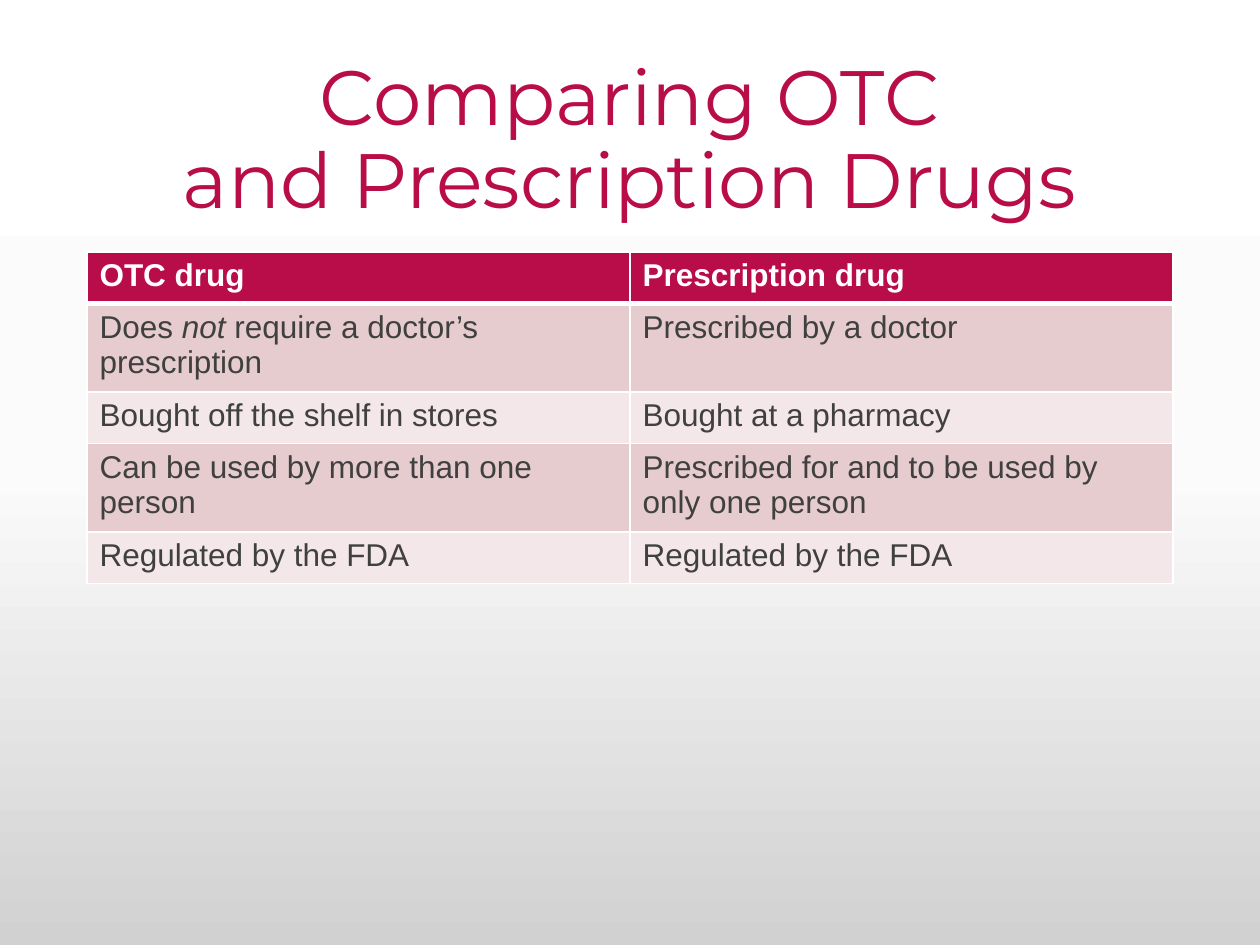
from lxml import etree
from pptx import Presentation
from pptx.dml.color import RGBColor
from pptx.enum import text
from pptx.oxml import ns
from pptx.util import Inches, Pt

CRIMSON = RGBColor(0xB8, 0x0D, 0x48)
ROSE = RGBColor(0xE6, 0xCC, 0xCF)
PALE_ROSE = RGBColor(0xF3, 0xE7, 0xE9)
CHARCOAL = RGBColor(0x3F, 0x40, 0x3F)
WHITE = RGBColor(0xFF, 0xFF, 0xFF)
NEAR_WHITE = RGBColor(0xFB, 0xFB, 0xFB)
GREY = RGBColor(0xD1, 0xD1, 0xD1)

LEFT, WIDTH = 0.69, 8.62
ROW_HEIGHT = 0.41
BACKGROUND_STOPS = [(0, WHITE), (50, NEAR_WHITE), (100, GREY)]

# A cell is a list of spans; every second span is italic.
HEADER = [["OTC drug"], ["Prescription drug"]]
BODY = [
    [["Does ", "not ", "require a doctor’s prescription"], ["Prescribed by a doctor"]],
    [["Bought off the shelf in stores"], ["Bought at a pharmacy"]],
    [["Can be used by more than one person"],
     ["Prescribed for and to be used by only one person"]],
    [["Regulated by the FDA"], ["Regulated by the FDA"]],
]


def add_child(parent, tag, **attributes):
    child = etree.SubElement(parent, ns.qn(tag))
    for name, value in attributes.items():
        child.set(name, str(value))
    return child


def set_background(page):
    """Fill the page from top to bottom with the three background stops."""
    page.background.fill.gradient()
    gradient = next(page.element.iter(ns.qn("a:gradFill")))
    for child in list(gradient):
        gradient.remove(child)
    stops = add_child(gradient, "a:gsLst")
    for percent, color in BACKGROUND_STOPS:
        stop = add_child(stops, "a:gs", pos=percent * 1000)
        add_child(stop, "a:srgbClr", val=color)
    add_child(gradient, "a:lin", ang=90 * 60000, scaled=0)


def format_font(font, **values):
    color = values.pop("color")
    for name, value in values.items():
        setattr(font, name, value)
    font.color.rgb = color


def add_title(page, wording):
    box = page.shapes.add_textbox(Inches(LEFT), Inches(0.4), Inches(WIDTH), Inches(1.45))
    frame = box.text_frame
    frame.word_wrap = True
    frame.vertical_anchor = text.MSO_ANCHOR.MIDDLE
    para = frame.paragraphs[0]
    para.text = wording
    para.alignment = text.PP_ALIGN.CENTER
    para.line_spacing = 0.9
    for span in para.runs:
        format_font(span.font, name="Montserrat", size=Pt(44), color=CRIMSON)


def set_borders(cell, top=1, bottom=1):
    """Draw white cell borders, with widths in points."""
    properties = cell._tc.get_or_add_tcPr()
    widths = {"a:lnL": 1, "a:lnR": 1, "a:lnT": top, "a:lnB": bottom}
    for tag, width in widths.items():
        line = add_child(properties, tag, w=Pt(width))
        add_child(add_child(line, "a:solidFill"), "a:srgbClr", val=WHITE)


def fill_cell(cell, spans, fill, color, bold):
    cell.fill.solid()
    cell.fill.fore_color.rgb = fill
    para = cell.text_frame.paragraphs[0]
    for index, wording in enumerate(spans):
        span = para.add_run()
        span.text = wording
        format_font(span.font, name="Arial", size=Pt(18), color=color,
                    bold=bold, italic=index % 2 == 1)


def add_comparison(page):
    rows = [HEADER] + BODY
    frame = page.shapes.add_table(len(rows), len(HEADER), Inches(LEFT), Inches(2),
                                  Inches(WIDTH), Inches(ROW_HEIGHT * len(rows)))
    table = frame.table
    for row_index, row in enumerate(rows):
        is_header = row_index == 0
        band = ROSE if row_index % 2 else PALE_ROSE
        for column_index, spans in enumerate(row):
            cell = table.cell(row_index, column_index)
            set_borders(cell, top=3 if row_index == 1 else 1, bottom=3 if is_header else 1)
            fill_cell(cell, spans, CRIMSON if is_header else band,
                      WHITE if is_header else CHARCOAL, is_header)


def main():
    deck = Presentation()
    deck.slide_width, deck.slide_height = Inches(10), Inches(7.5)
    page = deck.slides.add_slide(deck.slide_layouts[6])
    set_background(page)
    add_title(page, "Comparing OTC\vand Prescription Drugs")
    add_comparison(page)
    deck.save("out.pptx")


if __name__ == "__main__":
    main()
